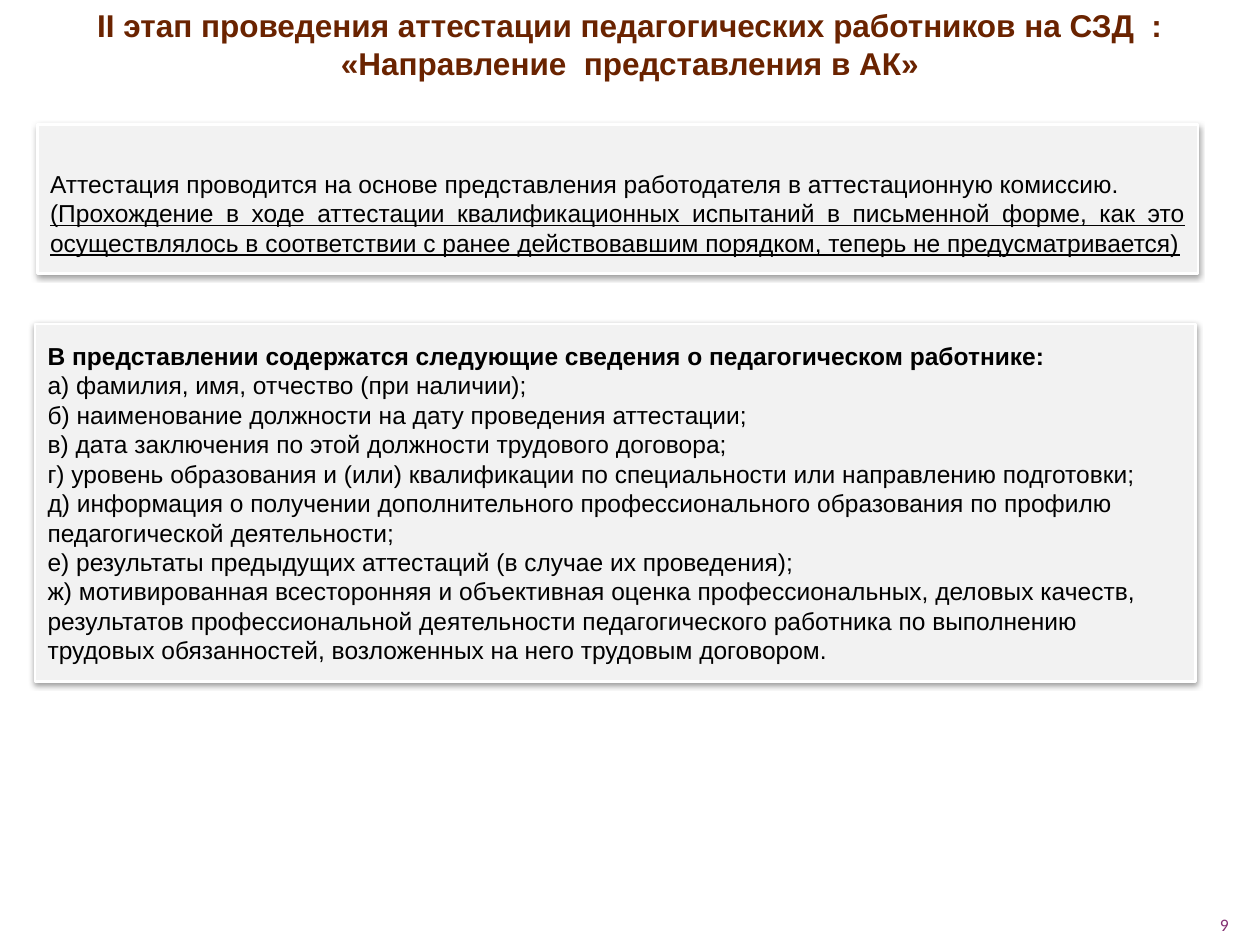
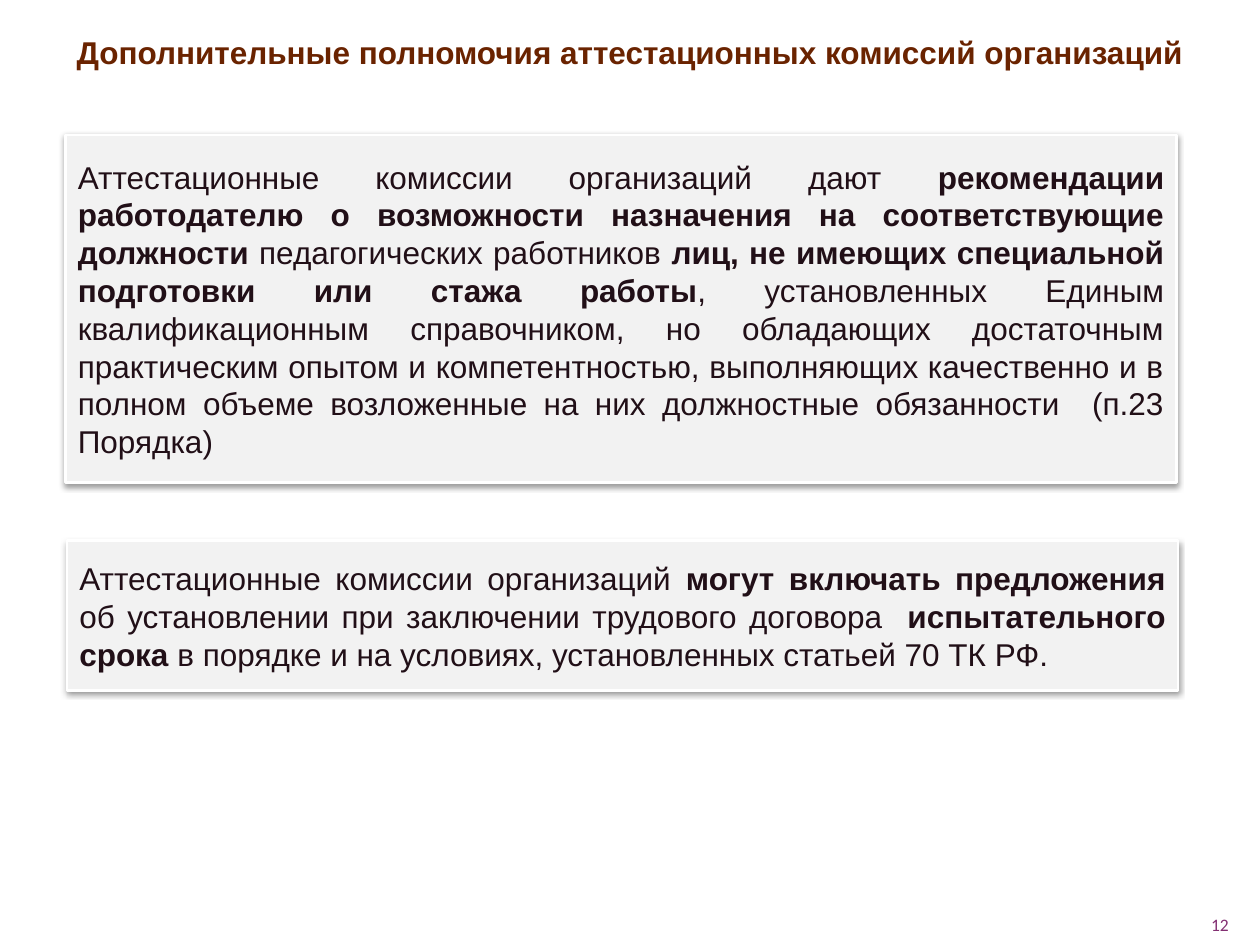
from dataclasses import dataclass

from lxml import etree
from pptx import Presentation
from pptx.dml.color import RGBColor
from pptx.enum.shapes import MSO_SHAPE
from pptx.enum.text import MSO_ANCHOR, MSO_AUTO_SIZE, PP_ALIGN
from pptx.oxml.ns import qn
from pptx.slide import Slide
from pptx.util import Cm, Length, Pt

RECTANGLE = MSO_SHAPE.RECTANGLE
TOP, MIDDLE, BOTTOM = MSO_ANCHOR.TOP, MSO_ANCHOR.MIDDLE, MSO_ANCHOR.BOTTOM
LEFT, CENTER = PP_ALIGN.LEFT, PP_ALIGN.CENTER
RIGHT, JUSTIFY = PP_ALIGN.RIGHT, PP_ALIGN.JUSTIFY
FIT_SHAPE = MSO_AUTO_SIZE.SHAPE_TO_FIT_TEXT

BROWN = RGBColor(0x6A, 0x23, 0x00)
PLUM = RGBColor(0x83, 0x2F, 0x72)
BLACK = RGBColor(0x00, 0x00, 0x00)
DARK = RGBColor(0x21, 0x0F, 0x17)
PANEL_GREY = RGBColor(0xF2, 0xF2, 0xF2)
WHITE = RGBColor(0xFF, 0xFF, 0xFF)

SLIDE_WIDTH, SLIDE_HEIGHT = Cm(25.4), Cm(19.05)
TITLE_ONLY_LAYOUT = 5

TITLE_FONT = {"name": "Arial", "size": Pt(18), "bold": True}
NUMBER_FONT = {"name": "Calibri", "size": Pt(10)}
NUMBER_FRAME = {
    "margin_left": 0, "margin_top": 0, "margin_right": 0, "margin_bottom": 0,
    "vertical_anchor": BOTTOM, "word_wrap": True,
}


@dataclass(frozen=True)
class Span:
    text: str
    bold: bool = False
    underline: bool = False


@dataclass(frozen=True)
class Panel:
    left: Length
    top: Length
    width: Length
    height: Length
    paragraphs: list[list[Span]]
    font_size: Length
    color: RGBColor
    alignment: PP_ALIGN = JUSTIFY
    margin_top: Length = Cm(0.13)


@dataclass(frozen=True)
class Page:
    number: str
    title: str
    title_top: Length
    title_height: Length
    panels: list[Panel]


def apply_format(target: object, values: dict) -> None:
    for name, value in values.items():
        setattr(target, name, value)


def add_title(slide: Slide, page: Page) -> None:
    title = slide.shapes.title
    apply_format(title, {"left": 0, "top": page.title_top,
                         "width": SLIDE_WIDTH, "height": page.title_height})
    apply_format(title.text_frame, {"text": page.title, "vertical_anchor": TOP,
                                    "word_wrap": True, "auto_size": FIT_SHAPE})
    paragraph = title.text_frame.paragraphs[0]
    paragraph.alignment = CENTER
    apply_format(paragraph.runs[0].font, TITLE_FONT)
    paragraph.runs[0].font.color.rgb = BROWN


def add_page_number(slide: Slide, number: str) -> None:
    box = slide.shapes.add_textbox(Cm(22.66), Cm(17.83), Cm(2.11), Cm(1.02))
    apply_format(box.text_frame, NUMBER_FRAME)
    paragraph = box.text_frame.paragraphs[0]
    paragraph.alignment = RIGHT
    run = paragraph.add_run()
    run.text = number
    apply_format(run.font, NUMBER_FONT)
    run.font.color.rgb = PLUM


def add_soft_shadow(shape) -> None:
    shape.shadow.inherit = False
    effects = shape.element.spPr.find(qn("a:effectLst"))
    shadow = etree.SubElement(
        effects, qn("a:outerShdw"), blurRad=str(Pt(3.1)), dist=str(Pt(1.6)),
        dir="5400000", rotWithShape="0")
    color = etree.SubElement(shadow, qn("a:srgbClr"), val=str(BLACK))
    etree.SubElement(color, qn("a:alpha"), val="38000")


def add_panel(slide: Slide, panel: Panel) -> None:
    shape = slide.shapes.add_shape(
        RECTANGLE, panel.left, panel.top, panel.width, panel.height)
    shape.fill.solid()
    shape.fill.fore_color.rgb = PANEL_GREY
    shape.line.color.rgb = WHITE
    shape.line.width = Pt(1.5)
    add_soft_shadow(shape)

    frame = shape.text_frame
    apply_format(frame, {"word_wrap": True, "vertical_anchor": MIDDLE,
                         "margin_top": panel.margin_top})
    for index, spans in enumerate(panel.paragraphs):
        paragraph = frame.add_paragraph() if index else frame.paragraphs[0]
        paragraph.alignment = panel.alignment
        for span in spans:
            run = paragraph.add_run()
            run.text = span.text
            apply_format(run.font, {
                "name": "Arial", "size": panel.font_size,
                "bold": span.bold, "underline": span.underline})
            run.font.color.rgb = panel.color


# Submission to the commission
BASIS = [
    [Span("Аттестация проводится на основе представления работодателя в аттестационную комиссию.")],
    [Span("(Прохождение в ходе аттестации квалификационных испытаний в письменной форме, "
          "как это осуществлялось в соответствии с ранее действовавшим порядком, "
          "теперь не предусматривается)", underline=True)],
]
SUBMISSION_ITEMS = [
    "а) фамилия, имя, отчество (при наличии);",
    "б) наименование должности на дату проведения аттестации;",
    "в) дата заключения по этой должности трудового договора;",
    "г) уровень образования и (или) квалификации по специальности или направлению подготовки;",
    "д) информация о получении дополнительного профессионального образования по профилю "
    "педагогической деятельности;",
    "е) результаты предыдущих аттестаций (в случае их проведения);",
    "ж) мотивированная всесторонняя и объективная оценка профессиональных, деловых качеств, "
    "результатов профессиональной деятельности педагогического работника по выполнению "
    "трудовых обязанностей, возложенных на него трудовым договором.",
]
SUBMISSION = [
    [Span("В представлении содержатся следующие сведения о педагогическом работнике:", bold=True)],
    *[[Span(item)] for item in SUBMISSION_ITEMS],
]

# Additional powers of the commissions
RECOMMENDATIONS = [[
    Span("Аттестационные комиссии организаций дают "),
    Span("рекомендации работодателю о возможности назначения на соответствующие должности ",
         bold=True),
    Span("педагогических работников "),
    Span("лиц, не имеющих специальной подготовки или стажа работы", bold=True),
    Span(", установленных Единым квалификационным справочником, но обладающих достаточным "
         "практическим опытом и компетентностью, выполняющих качественно и в полном объеме "
         "возложенные на них должностные обязанности  (п.23 Порядка)"),
]]
PROBATION = [[
    Span("Аттестационные комиссии организаций "),
    Span("могут включать предложения ", bold=True),
    Span("об установлении при заключении трудового договора  "),
    Span("испытательного срока ", bold=True),
    Span("в порядке и на условиях, установленных статьей 70 ТК РФ."),
]]

PAGES = [
    Page("9",
         "II этап проведения аттестации педагогических работников на СЗД  : "
         "«Направление  представления в АК»",
         Cm(0), Cm(1.8), [
             Panel(Cm(0.76), Cm(2.51), Cm(23.39), Cm(3), BASIS, Pt(14), BLACK,
                   margin_top=Cm(0.7)),
             Panel(Cm(0.71), Cm(6.53), Cm(23.39), Cm(7.21), SUBMISSION, Pt(14), BLACK, LEFT),
         ]),
    Page("12", "Дополнительные полномочия аттестационных комиссий организаций",
         Cm(0.53), Cm(1.02), [
             Panel(Cm(1.32), Cm(2.72), Cm(22.4), Cm(7.01), RECOMMENDATIONS, Pt(18), DARK),
             Panel(Cm(1.35), Cm(10.9), Cm(22.4), Cm(3.02), PROBATION, Pt(18), DARK),
         ]),
]


def main() -> None:
    presentation = Presentation()
    presentation.slide_width = SLIDE_WIDTH
    presentation.slide_height = SLIDE_HEIGHT
    for page in PAGES:
        slide = presentation.slides.add_slide(presentation.slide_layouts[TITLE_ONLY_LAYOUT])
        add_page_number(slide, page.number)
        add_title(slide, page)
        for panel in page.panels:
            add_panel(slide, panel)
    presentation.save("out.pptx")


if __name__ == "__main__":
    main()
